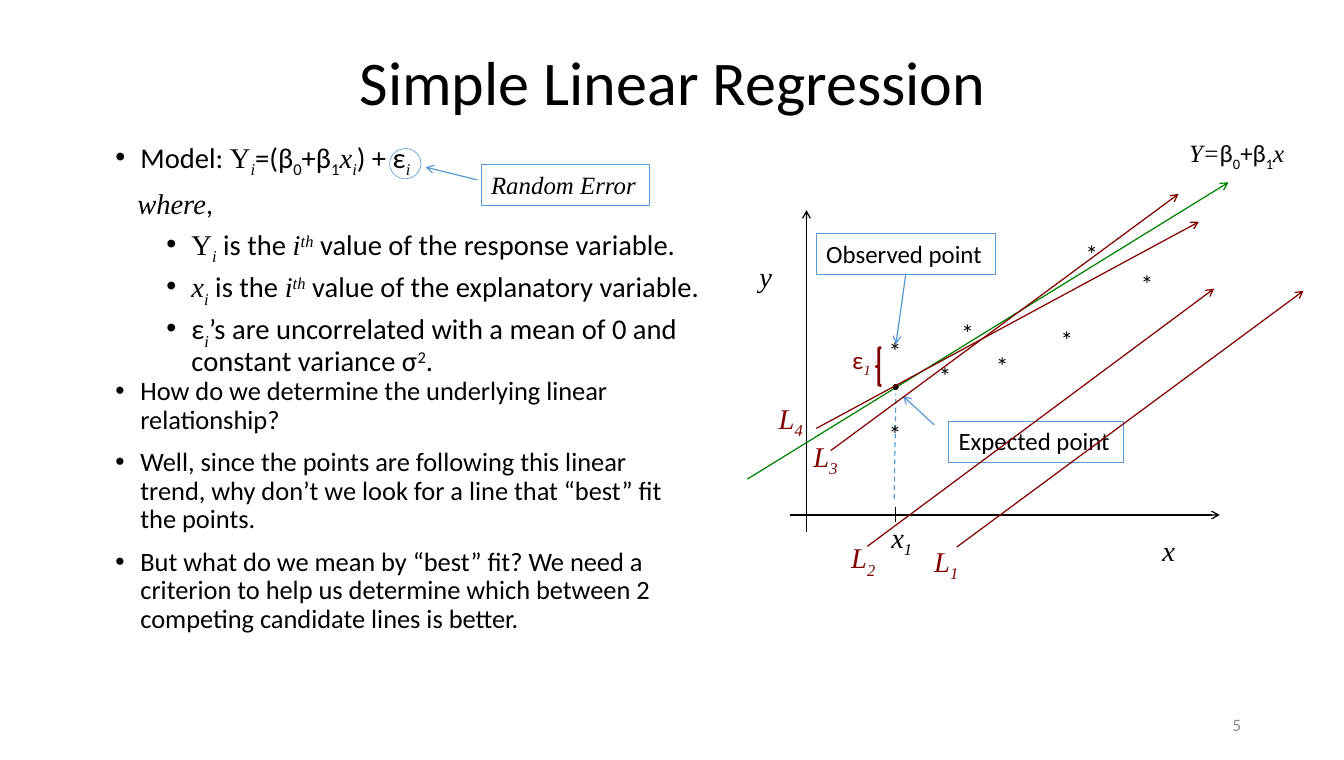
import pptx
import pptx.util
import pptx.dml.color
import pptx.enum.dml
import pptx.enum.shapes
import pptx.enum.text
import pptx.oxml.ns
import lxml.etree

Cm = pptx.util.Cm
Pt = pptx.util.Pt
rgb = pptx.dml.color.RGBColor.from_string
qn = pptx.oxml.ns.qn
Align = pptx.enum.text.PP_ALIGN
Shape = pptx.enum.shapes.MSO_SHAPE

BLACK, BLUE, GREEN, MAROON, GREY = "000000", "5B9BD5", "008000", "800000", "8C8C8C"
BASELINES = {"_": "-25000", "^": "30000"}

deck = pptx.Presentation()
deck.slide_width, deck.slide_height = Cm(38.18), Cm(21.59)
page = deck.slides.add_slide(deck.slide_layouts[6])


# Style letters: t = serif, i = serif italic, _ = subscript, ^ = superscript
def add_text(left, top, width, height, paragraphs, size, colour=BLACK):
    box = page.shapes.add_textbox(Cm(left), Cm(top), Cm(width), Cm(height))
    frame = box.text_frame
    frame.word_wrap = True
    frame.margin_left = frame.margin_right = Cm(0.28)
    frame.margin_top = frame.margin_bottom = Cm(0.14)
    for number, runs in enumerate(paragraphs):
        para = frame.paragraphs[0] if number == 0 else frame.add_paragraph()
        for text, style in runs:
            span = para.add_run()
            span.text = text
            span.font.size = Pt(size)
            span.font.color.rgb = rgb(colour)
            serif = "t" in style or "i" in style
            span.font.name = "Times New Roman" if serif else "Calibri"
            span.font.italic = "i" in style
            for mark, baseline in BASELINES.items():
                if mark in style:
                    span._r.get_or_add_rPr().set("baseline", baseline)
    return box


def add_line(x1, y1, x2, y2, colour, arrow=True):
    line = page.shapes.add_connector(
        pptx.enum.shapes.MSO_CONNECTOR.STRAIGHT, Cm(x1), Cm(y1), Cm(x2), Cm(y2))
    line.line.color.rgb = rgb(colour)
    line.line.width = Pt(1)
    if arrow:
        lxml.etree.SubElement(line.line._get_or_add_ln(), qn("a:tailEnd"), type="arrow")
    lxml.etree.SubElement(line._element.spPr, qn("a:effectLst"))
    return line


title = add_text(2.62, 1.14, 32.99, 2.59, [[("Simple Linear Regression", "")]], 50)
title.text_frame.vertical_anchor = pptx.enum.text.MSO_ANCHOR.MIDDLE
title.text_frame.paragraphs[0].alignment = Align.CENTER
title.text_frame.paragraphs[0].line_spacing = 0.9

model = add_text(3, 3.86, 17.7, 6.58, [
    [("Model: ", ""), ("Y", "t"), ("i", "i_"), ("=(β", ""), ("0", "_"), ("+β", ""),
     ("1", "_"), ("x", "i"), ("i", "i_"), (") + ε", ""), ("i", "i_")],
    [("where", "i"), (",", "")],
    [("Y", "t"), ("i", "i_"), (" is the ", ""), ("i", "i"), ("th", "i^"),
     (" value of the response variable.", "")],
    [("x", "i"), ("i", "i_"), (" is the ", ""), ("i", "i"), ("th", "i^"),
     (" value of the explanatory variable.", "")],
    [("ε", ""), ("i", "i_"),
     ("’s are uncorrelated with a mean of 0 and constant variance σ", ""),
     ("2", "^"), (".", "")],
], 23)
questions = add_text(3, 10.59, 16.59, 7.8, [
    [("How do we determine the underlying linear relationship?", "")],
    [("Well, since the points are following this linear trend, "
      "why don’t we look for a line that “best” fit the points.", "")],
    [("But what do we mean by “best” fit? We need a criterion to help us determine "
      "which between 2 competing candidate lines is better.", "")],
], 21.3)

BULLET, PLAIN, SUB_BULLET = (0.71, -0.71, 11.3), (0.62, 0, 11.3), (2.16, -0.71, 5.7)
for body, levels in ((model, [BULLET, PLAIN] + [SUB_BULLET] * 3),
                     (questions, [BULLET] * 3)):
    for number, (para, level) in enumerate(zip(body.text_frame.paragraphs, levels)):
        margin, indent, space = level
        properties = para._p.get_or_add_pPr()
        properties.set("marL", str(Cm(margin)))
        properties.set("indent", str(Cm(indent)))
        if indent:
            lxml.etree.SubElement(properties, qn("a:buFont"), typeface="Arial")
            lxml.etree.SubElement(properties, qn("a:buChar"), char="•")
        para.line_spacing = 0.9
        if number:
            para.space_before = Pt(space)

add_line(22.43, 14.63, 34.65, 14.63, BLACK)
add_line(22.91, 15.11, 22.91, 5.97, BLACK)
add_line(25.45, 14.4, 25.45, 14.83, BLACK, arrow=False)
add_line(21.23, 13.61, 34.9, 5.18, GREEN)
drop_line = add_line(25.4, 14.17, 25.45, 11.18, BLUE, arrow=False)
drop_line.line.dash_style = pptx.enum.dml.MSO_LINE.DASH

for preset, left, top, width, height, colour, weight, fill in (
        (Shape.OVAL, 11.07, 4.22, 0.89, 0.86, BLUE, 0.5, None),
        (Shape.OVAL, 25.37, 10.92, 0.15, 0.15, BLACK, 0.5, BLACK),
        (Shape.LEFT_BRACE, 24.89, 9.88, 0.15, 1.07, MAROON, 2.25, None)):
    mark = page.shapes.add_shape(preset, Cm(left), Cm(top), Cm(width), Cm(height))
    mark.shadow.inherit = False
    mark.line.color.rgb = rgb(colour)
    mark.line.width = Pt(weight)
    if fill:
        mark.fill.solid()
        mark.fill.fore_color.rgb = rgb(fill)
    else:
        mark.fill.background()

for left, top, width, text, style, pointer in (
        (13.67, 4.67, 4.78, "Random Error", "i", (13.56, 5.11, 12.09, 4.75)),
        (26.95, 11.96, 4.98, "Expected point", "", (26.54, 12.07, 25.65, 11.25)),
        (23.19, 6.63, 5.08, "Observed point", "", (25.73, 7.8, 25.45, 9.78))):
    callout = add_text(left, top, width, 1.17, [[(text, style)]], 20)
    callout.line.color.rgb = rgb(BLUE)
    callout.line.width = Pt(0.75)
    add_line(*pointer, BLUE)

for left, top in ((24.97, 9.4), (24.97, 11.76), (26.39, 10.11), (27.03, 8.89),
                  (28.02, 9.83), (29.85, 9.07), (30.56, 6.63), (32.13, 7.49)):
    add_text(left, top, 0.89, 1.17, [[("*", "")]], 20)

add_text(32.74, 14.99, 1.17, 1.27, [[("x", "i")]], 23)
add_text(21.29, 7.21, 1.17, 1.27, [[("y", "i")]], 23)
add_text(25.04, 14.63, 1.45, 1.27, [[("x", "i"), ("1", "i_")]], 23)
add_text(23.93, 9.65, 1.22, 1.17, [[("ε", ""), ("1", "i_")]], 20, MAROON)
add_text(33.5, 3.78, 4.09, 1.17, [[("Y=", "i"), ("β", ""), ("0", "_"), ("+β", ""),
                                   ("1", "_"), ("x", "i")]], 20)

for number, line_ends, left, top in (
        ("1", (27.18, 15.54, 37.03, 8.26), 26.26, 15.32),
        ("2", (24.64, 15.52, 34.49, 8.2), 23.9, 15.21),
        ("3", (23.6, 12.8, 33.48, 5.51), 22.83, 12.32),
        ("4", (23.19, 12.17, 34.06, 6.3), 21.84, 11.25)):
    add_line(*line_ends, MAROON)
    add_text(left, top, 1.65, 1.27, [[("L", "i"), (number, "i_")]], 23, MAROON)

page_number = add_text(26.95, 20.02, 8.59, 1.14, [[("5", "")]], 14, GREY)
page_number.text_frame.vertical_anchor = pptx.enum.text.MSO_ANCHOR.MIDDLE
page_number.text_frame.paragraphs[0].alignment = Align.RIGHT

deck.save("out.pptx")
